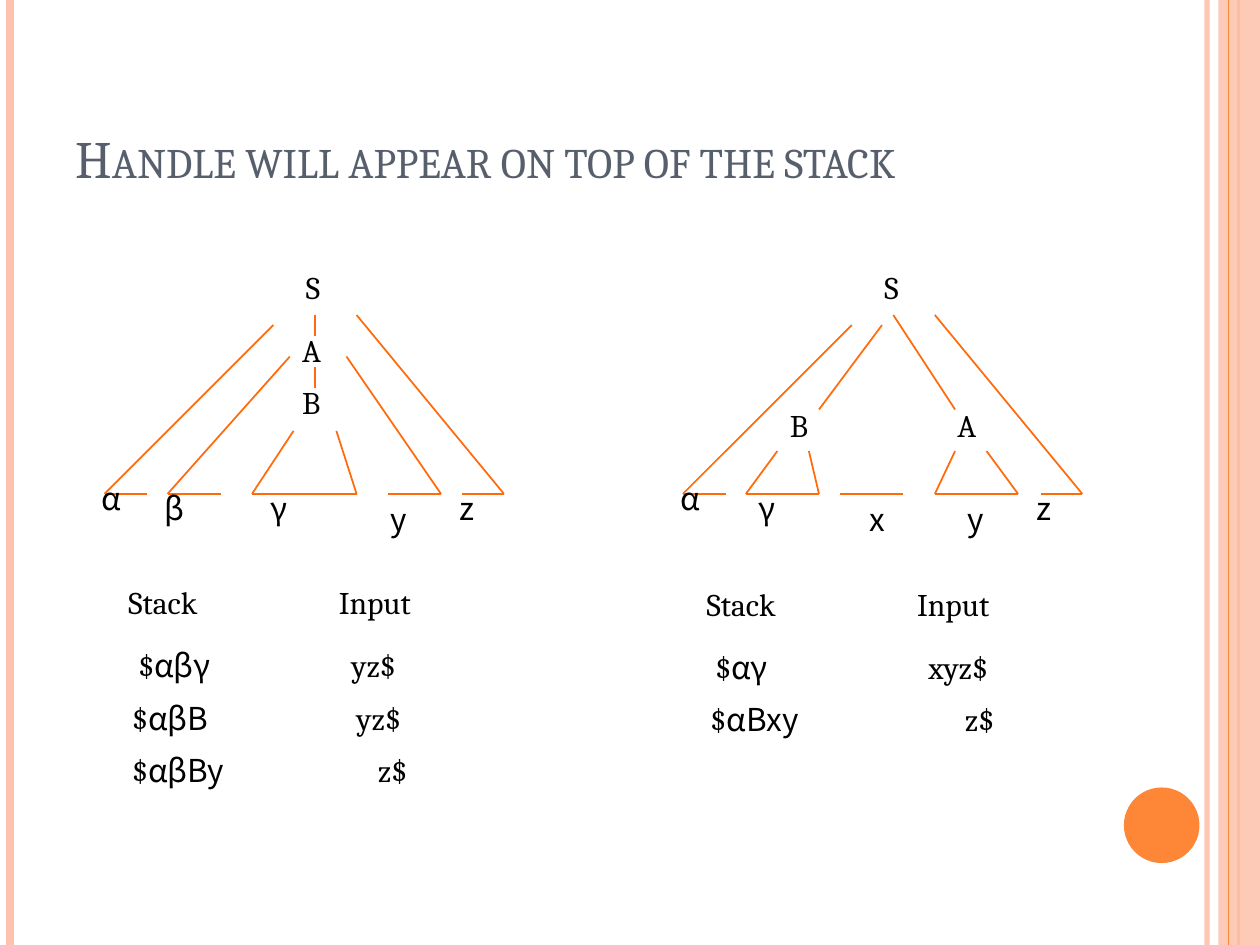
import dataclasses
import itertools

import pptx
import pptx.dml.color
import pptx.enum.shapes
import pptx.enum.text
import pptx.oxml.ns
import pptx.util
from lxml import etree

Inches = pptx.util.Inches
Anchor = pptx.enum.text.MSO_ANCHOR
AutoSize = pptx.enum.text.MSO_AUTO_SIZE
Shape = pptx.enum.shapes.MSO_SHAPE


@dataclasses.dataclass(frozen=True)
class Theme:
    """Colours, fonts and sizes of the slide."""
    band: str = "FEC3AE"
    accent: str = "FE8637"
    branch: str = "FF6B0A"
    title: str = "575F6D"
    ink: str = "000000"
    serif: str = "Cambria"
    symbol: str = "Noto Sans CJK JP"
    title_size: int = 30
    body_size: int = 18
    branch_width: float = 1


@dataclasses.dataclass(frozen=True)
class Box:
    """A region in inches."""
    left: float
    top: float
    width: float
    height: float


THEME = Theme()
LINE_HEIGHT = 0.51
BASE = 1.84
NODE_WIDTHS = {"S": 0.39, "A": 0.45, "B": 0.43}
GREEK_WIDTH, LATIN_WIDTH = 0.54, 0.37
ROW_START, ROW_PITCH = 0.5, 0.415

OUTER_PATHS = [
    [(1.34, 0.5), (0, BASE), (0.34, BASE)],
    [(2, 0.42), (3.17, BASE), (2.84, BASE)],
]
NESTED_TREE = {
    "paths": OUTER_PATHS + [
        [(1.47, 0.75), (0.5, BASE), (0.92, BASE)],
        [(1.5, 1.34), (1.17, BASE), (2, BASE), (1.84, 1.34)],
        [(1.92, 0.75), (2.67, BASE), (2.25, BASE)],
        [(1.67, 0.42), (1.67, 0.59)],
        [(1.67, 0.83), (1.67, 1)],
    ],
    "nodes": {"S": (1.5, 0), "A": (1.47, 0.5), "B": (1.47, 0.91)},
    "leaves": {"α": (-0.12, 1.67), "β": (0.38, 1.75), "γ": (1.22, 1.75),
               "y": (2.17, BASE), "z": (2.72, 1.75)},
}
SIBLING_TREE = {
    "paths": OUTER_PATHS + [
        [(0.75, 1.5), (0.5, BASE), (1.08, BASE), (1, 1.5)],
        [(1.25, BASE), (1.75, BASE)],
        [(2.16, 1.5), (2, BASE), (2.66, BASE), (2.41, 1.5)],
        [(1.67, 0.42), (2.16, 1.17)],
        [(1.58, 0.5), (1.08, 1.17)],
    ],
    "nodes": {"S": (1.5, 0), "A": (2.08, 1.09), "B": (0.75, 1.09)},
    "leaves": {"α": (-0.12, 1.67), "γ": (0.5, 1.75), "x": (1.38, BASE),
               "y": (2.16, BASE), "z": (2.71, 1.75)},
}
NESTED_TRACE = [(0.17, "αβγ", 1.86, "yz$"), (0.12, "αβB", 1.9, "yz$"),
                (0.12, "αβBy", 2.07, "z$")]
SIBLING_TRACE = [(0.16, "αγ", 1.85, "xyz$"), (0.12, "αBxy", 2.14, "z$")]


def set_attributes(target, values):
    """Set every named attribute of the target."""
    for name, value in values.items():
        setattr(target, name, value)


def rgb(colour):
    """Turn a hexadecimal string into a colour."""
    return pptx.dml.color.RGBColor.from_string(colour)


def set_alpha(shape, percent):
    """Set the opacity of the first solid colour of a shape."""
    colour = shape._element.spPr.find(".//" + pptx.oxml.ns.qn("a:srgbClr"))
    alpha = etree.SubElement(colour, pptx.oxml.ns.qn("a:alpha"))
    alpha.set("val", str(percent * 1000))


def add_line(slide, start, end, colour, width):
    """Draw a straight connector without a shadow."""
    points = [Inches(value) for value in (*start, *end)]
    line = slide.shapes.add_connector(
        pptx.enum.shapes.MSO_CONNECTOR.STRAIGHT, *points)
    line.line.color.rgb = rgb(colour)
    line.line.width = pptx.util.Pt(width)
    etree.SubElement(line._element.spPr, pptx.oxml.ns.qn("a:effectLst"))
    return line


def add_block(slide, kind, box, colour):
    """Draw a filled shape without an outline."""
    shape = slide.shapes.add_shape(
        kind, *map(Inches, dataclasses.astuple(box)))
    shape.shadow.inherit = False
    shape.fill.solid()
    shape.fill.fore_color.rgb = rgb(colour)
    shape.line.fill.background()
    return shape


def add_text(slide, box, runs, size=THEME.body_size, colour=THEME.ink, **frame):
    """Write runs of text and font in one paragraph and return them."""
    shape = slide.shapes.add_textbox(*map(Inches, dataclasses.astuple(box)))
    defaults = {"word_wrap": False, "auto_size": AutoSize.SHAPE_TO_FIT_TEXT}
    set_attributes(shape.text_frame, defaults | frame)
    paragraph = shape.text_frame.paragraphs[0]
    for text, font in runs:
        run = paragraph.add_run()
        run.text = text
        set_attributes(run.font, {"name": font, "size": pptx.util.Pt(size)})
        run.font.color.rgb = rgb(colour)
    return paragraph.runs


def add_decoration(slide, box):
    """Draw the edge stripes and the disc."""
    def stripe(left, colour, width):
        return add_line(slide, (box.left + left, box.top),
                        (box.left + left, box.top + box.height), colour, width)

    set_alpha(stripe(9.58, THEME.band, 3), 93)
    stripe(0.08, THEME.band, 4.5)
    stripe(9.83, THEME.accent, 1.5)
    band = Box(box.left + 9.67, box.top, 0.33, box.height)
    set_alpha(add_block(slide, Shape.RECTANGLE, band, THEME.band), 87)
    stripe(9.75, THEME.accent, 0.75)
    disc = Box(box.left + 8.92, box.top + 6.25, 0.6, 0.6)
    add_block(slide, Shape.OVAL, disc, THEME.accent)


def add_title(slide, box, text):
    """Write the title in small capitals at the foot of its box."""
    runs = add_text(slide, box, [(text, THEME.serif)], THEME.title_size,
                    THEME.title, word_wrap=True, auto_size=AutoSize.NONE,
                    vertical_anchor=Anchor.BOTTOM)
    runs[0]._r.get_or_add_rPr().set("cap", "small")


def add_tree(slide, box, tree):
    """Draw a parse tree with its branches, nodes and leaves."""
    for points in tree["paths"]:
        placed = [(box.left + x, box.top + y) for x, y in points]
        for start, end in itertools.pairwise(placed):
            add_line(slide, start, end, THEME.branch, THEME.branch_width)
    for kind, font in (("nodes", THEME.serif), ("leaves", THEME.symbol)):
        for text, (x, y) in tree[kind].items():
            leaf_width = LATIN_WIDTH if text.isascii() else GREEK_WIDTH
            width = NODE_WIDTHS.get(text, leaf_width)
            label = Box(box.left + x, box.top + y, width, LINE_HEIGHT)
            add_text(slide, label, [(text, font)])


def add_trace(slide, box, rows):
    """Write the stack and input columns of a parse."""
    for text, left, width in (("Stack", 0.09, 0.95), ("Input", 1.76, 0.91)):
        heading = Box(box.left + left, box.top, width, LINE_HEIGHT)
        add_text(slide, heading, [(text, THEME.serif)])
    for index, (stack_left, symbols, input_left, remaining) in enumerate(rows):
        top = box.top + ROW_START + index * ROW_PITCH
        add_text(slide, Box(box.left + stack_left, top, 1.38, LINE_HEIGHT),
                 [("$", THEME.serif), (symbols, THEME.symbol)], word_wrap=True)
        width = 0.18 + 0.17 * len(remaining)
        add_text(slide, Box(box.left + input_left, top, width, LINE_HEIGHT),
                 [(remaining, THEME.serif)])


def main():
    """Build and save the presentation."""
    presentation = pptx.Presentation()
    set_attributes(presentation, {"slide_width": Inches(10),
                                  "slide_height": Inches(7.5)})
    slide = presentation.slides.add_slide(presentation.slide_layouts[6])
    add_decoration(slide, Box(0, 0, 10, 7.5))
    add_title(slide, Box(0.5, 0.3, 8.17, 1.25),
              "Handle will appear on top of the stack")
    panels = ((0.83, 4.58, NESTED_TREE, NESTED_TRACE),
              (5.42, 4.59, SIBLING_TREE, SIBLING_TRACE))
    for left, trace_top, tree, trace in panels:
        add_tree(slide, Box(left, 2.08, 3.17, 2.35), tree)
        add_trace(slide, Box(left, trace_top, 3.17, 1.84), trace)
    presentation.save("out.pptx")


if __name__ == "__main__":
    main()
